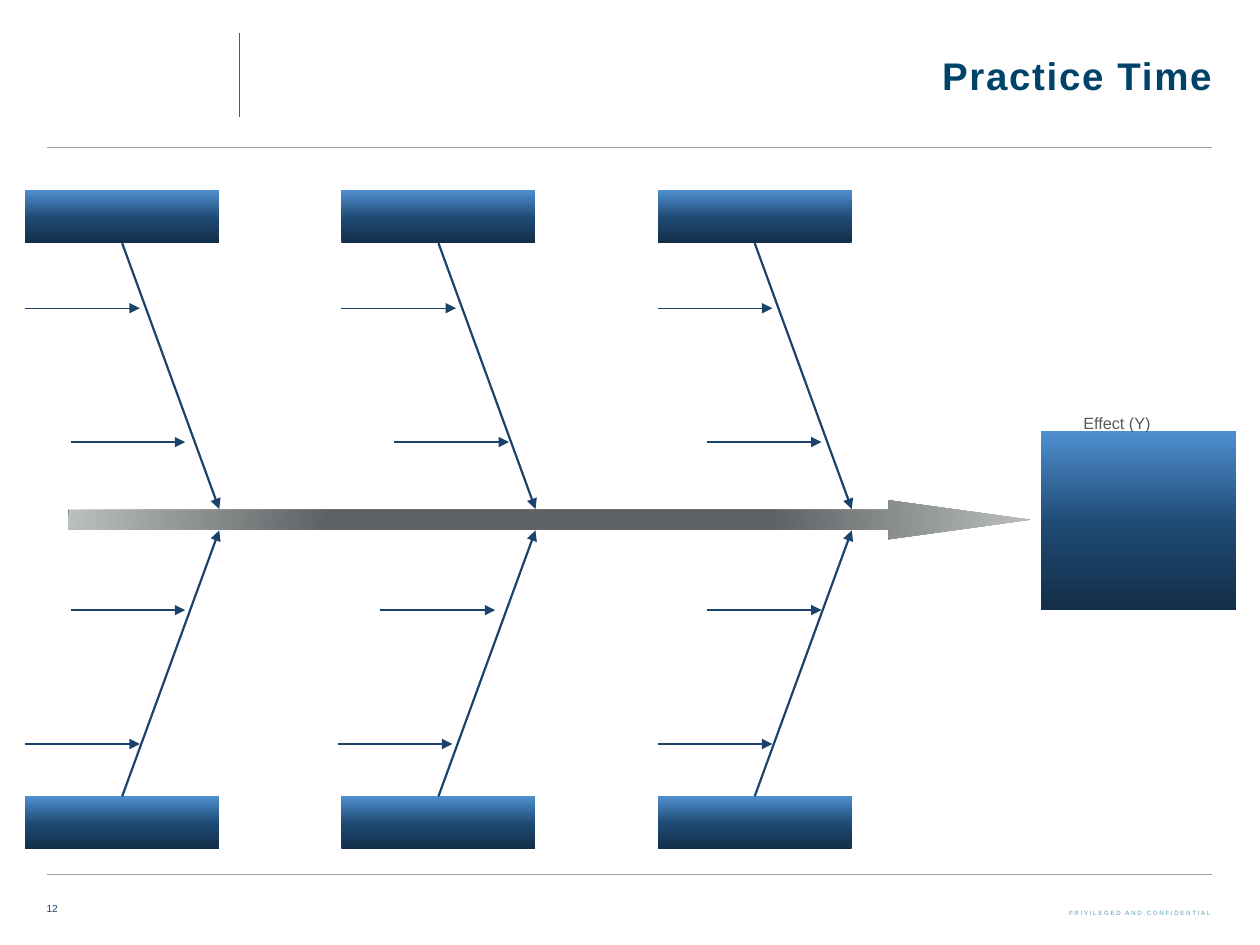
"""Build a fishbone diagram slide with six empty causes and one effect."""
from lxml import etree
from pptx import Presentation
from pptx import util as u
from pptx.dml.color import RGBColor
from pptx.enum import shapes, text
from pptx.oxml import parse_xml
from pptx.oxml.ns import nsdecls, qn

FONT = "Arial"
TITLE = RGBColor(0x00, 0x43, 0x69)
NAVY = RGBColor(0x1A, 0x43, 0x6B)
NUMBER = RGBColor(0x1D, 0x44, 0x6B)
RULE = RGBColor(0x9C, 0xA2, 0x99)
DIVIDER = RGBColor(0x40, 0x60, 0x78)
GREY = RGBColor(0x59, 0x59, 0x59)
TEAL = RGBColor(0x51, 0x9C, 0xBB)
BLUES = ((0, RGBColor(0x13, 0x2E, 0x48)), (48, RGBColor(0x1F, 0x4A, 0x74)),
         (100, RGBColor(0x4E, 0x8F, 0xCF)))
GREYS = ((46, RGBColor(0x5E, 0x62, 0x64)), (100, RGBColor(0xBB, 0xBE, 0xBE)),
         (100, RGBColor(0x34, 0x36, 0x37)))
DOWN = '<a:lin ang="16200000" scaled="0"/>'
RADIAL = ('<a:path path="circle"><a:fillToRect l="50000" t="130000" '
          'r="50000" b="-30000"/></a:path>')
SUBSCRIPT = -25000

LEFT, PITCH, BONE_W, BONE_H = 0.2, 2.51, 1.54, 2.53
UPPER_TOP, LOWER_TOP = 1.51, 4.21
HEAD_H, TWIG_W = 0.42, 0.91
UPPER_ROWS, LOWER_ROWS = (0.37, 0.79), (0.33, 0.75)
UPPER_INDENTS = ((0, 0.36), (0, 0.42), (0, 0.39))
LOWER_INDENTS = ((0, 0.36), (-0.03, 0.31), (0, 0.39))


def add_line(s, x1, y1, x2, y2, color, width, arrow=False):
    """Draw a straight line, with an arrowhead at its end if asked."""
    line = s.shapes.add_connector(shapes.MSO_CONNECTOR.STRAIGHT,
                                  *map(u.Inches, (x1, y1, x2, y2)))
    line.line.color.rgb = color
    line.line.width = u.Pt(width)
    if arrow:
        etree.SubElement(line.line._get_or_add_ln(), qn("a:tailEnd"), type="triangle")
    etree.SubElement(line._element.spPr, qn("a:effectLst"))


def add_gradient_shape(s, kind, box, stops, direction):
    """Add an unlined shape filled with a gradient."""
    sp = s.shapes.add_shape(kind, *map(u.Inches, box))
    sp.shadow.inherit = False
    sp.line.fill.background()
    marks = "".join(f'<a:gs pos="{pos * 1000}"><a:srgbClr val="{color}"/></a:gs>'
                    for pos, color in stops)
    fill = parse_xml(f'<a:gradFill {nsdecls("a")} rotWithShape="1">'
                     f'<a:gsLst>{marks}</a:gsLst>{direction}</a:gradFill>')
    sp._element.spPr.find(qn("a:prstGeom")).addnext(fill)
    return sp


def write(sp, box, words, size, color, align=text.PP_ALIGN.LEFT,
          anchor=text.MSO_ANCHOR.TOP, side=0.1, bold=False, **marks):
    """Place a text shape and write one formatted run in it."""
    sp.left, sp.top, sp.width, sp.height = map(u.Inches, box)
    tf = sp.text_frame
    tf.word_wrap = True
    tf.auto_size = text.MSO_AUTO_SIZE.NONE
    tf.vertical_anchor = anchor
    tf.margin_left = tf.margin_right = u.Inches(side)
    tf.margin_top = tf.margin_bottom = u.Inches(0.05)
    p = tf.paragraphs[0]
    p.alignment = align
    r = p.add_run()
    r.text = words
    r.font.name, r.font.size, r.font.bold = FONT, u.Pt(size), bold
    r.font.color.rgb = color
    for name, value in marks.items():
        r.font._element.set(name, str(value))
    return p


def add_text(s, box, *args, **kwargs):
    """Add a text box holding one subscript run."""
    return write(s.shapes.add_textbox(0, 0, 0, 0), box, *args,
                 baseline=SUBSCRIPT, **kwargs)


def add_frame(s, left, top, width, height):
    """Add the title, rules and footer inside the page frame."""
    right, bottom = left + width, top + height
    middle = text.MSO_ANCHOR.MIDDLE
    for y in (top, bottom):
        add_line(s, left, y, right, y, RULE, 0.5)
    add_line(s, 1.9, 0.26, 1.9, 0.93, DIVIDER, 0.75)
    write(s.shapes.title, (right - 6.48, 0.27, 6.48, 0.66), "Practice Time", 22, TITLE,
          text.PP_ALIGN.RIGHT, middle, side=0, bold=True, spc=100)
    add_text(s, (left, bottom + 0.12, 1.24, 0.21), "12", 10, NUMBER,
             anchor=middle, side=0)
    p = add_text(s, (right - 2.39, bottom + 0.06, 2.48, 0.44),
                 "PRIVILEGED AND CONFIDENTIAL", 6, TEAL,
                 text.PP_ALIGN.RIGHT, middle, spc=100)
    p.line_spacing = 0.75


def add_bone(s, left, top, width, height, rows, indents, lower=False):
    """Add a cause box, its slanted bone and its two twigs in a box."""
    def at(share):
        return top + height * (1 - share if lower else share)

    head_top = top + height - HEAD_H if lower else top
    add_gradient_shape(s, shapes.MSO_SHAPE.RECTANGLE,
                       (left, head_top, width, HEAD_H), BLUES, DOWN)
    add_line(s, left + width / 2, at(HEAD_H / height), left + width, at(1),
             NAVY, 1.25, True)
    for row, indent in zip(rows, indents):
        x = left + indent
        add_line(s, x, at(row), x + TWIG_W, at(row), NAVY, 0.75, True)


def add_spine(s, left, top, width, height):
    """Add the wide arrow that runs towards the effect."""
    spine = add_gradient_shape(s, shapes.MSO_SHAPE.RIGHT_ARROW,
                               (left, top, width, height), GREYS, RADIAL)
    spine.adjustments[0], spine.adjustments[1] = 0.5, 3.65


def add_effect(s, left, top, width, height):
    """Add the effect box and its label."""
    add_gradient_shape(s, shapes.MSO_SHAPE.RECTANGLE,
                       (left, top, width, height), BLUES, DOWN)
    add_text(s, (left + 0.24, top - 0.34, width, 0.37), "Effect (Y)", 16, GREY)


def main():
    """Build and save the slide."""
    prs = Presentation()
    prs.slide_width, prs.slide_height = u.Inches(10), u.Inches(7.5)
    s = prs.slides.add_slide(prs.slide_layouts[5])
    add_frame(s, 0.37, 1.17, 9.25, 5.77)
    add_spine(s, 0.54, 3.97, 7.64, 0.31)
    for i, (upper, lower) in enumerate(zip(UPPER_INDENTS, LOWER_INDENTS)):
        x = LEFT + i * PITCH
        add_bone(s, x, UPPER_TOP, BONE_W, BONE_H, UPPER_ROWS, upper)
        add_bone(s, x, LOWER_TOP, BONE_W, BONE_H, LOWER_ROWS, lower, True)
    add_effect(s, 8.26, 3.42, 1.55, 1.42)
    prs.save("out.pptx")


if __name__ == "__main__":
    main()
